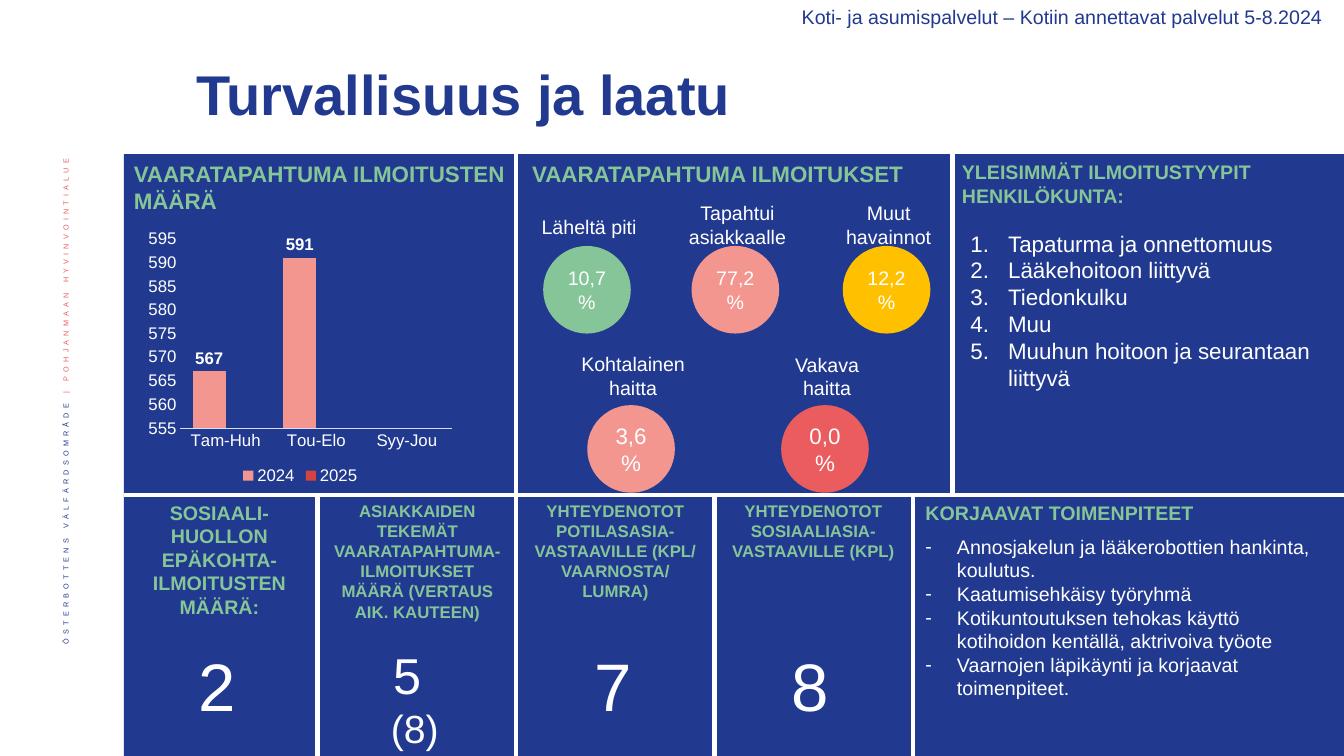
"""Build the safety and quality slide for home services."""
from dataclasses import dataclass

import pptx
import pptx.chart.data
import pptx.dml.color
import pptx.enum.chart
import pptx.enum.shapes
import pptx.enum.text
import pptx.util
from lxml import etree
from pptx.oxml.ns import qn

Pt = pptx.util.Pt
ALIGN = pptx.enum.text.PP_ALIGN
ANCHOR = pptx.enum.text.MSO_ANCHOR
SHAPE = pptx.enum.shapes.MSO_SHAPE


@dataclass(frozen=True)
class Theme:
    font: str = "Arial"
    navy: str = "213A8F"
    white: str = "FFFFFF"
    green: str = "85C598"
    pink: str = "F39690"
    coral: str = "EB5C5F"
    yellow: str = "FFC000"
    red: str = "D3433F"
    axis: str = "D6DDF6"
    title: int = 40
    figure: int = 48
    large: int = 16
    body: int = 14
    small: int = 12
    side: int = 9


THEME = Theme()

TITLE = "Turvallisuus ja laatu"
PERIOD = "Koti- ja asumispalvelut – Kotiin annettavat palvelut 5-8.2024"
SIDE_TEXT = [
    ("ÖSTERBOTTENS VÄLFÄRDSOMRÅDE ", THEME.navy),
    ("| POHJANMAAN HYVINVOINTIALUE ", THEME.coral),
]
PANEL_HEADINGS = [
    ("VAARATAPAHTUMA ILMOITUSTEN MÄÄRÄ", (88.5, 111, 279.5, 46), THEME.large),
    ("VAARATAPAHTUMA ILMOITUKSET", (373, 111, 306, 27), THEME.large),
    ("YLEISIMMÄT ILMOITUSTYYPIT HENKILÖKUNTA:", (680, 111, 280, 41), THEME.body),
    ("KORJAAVAT TOIMENPITEET", (654, 354, 302, 24), THEME.body),
]
CHART_FRAME = (101.5, 160.5, 226, 188.5)
CATEGORIES = ["Tam-Huh", "Tou-Elo", "Syy-Jou"]
SERIES = [
    ("2024", (567, 591, None), THEME.pink),
    ("2025", (None, None, None), THEME.red),
]
SHARES = [
    ("Läheltä piti", "10,7%", (388, 175.7), 150, THEME.green, THEME.body),
    ("Tapahtui asiakkaalle", "77,2 %", (494, 175.7), 140, THEME.pink, THEME.body),
    ("Muut havainnot", "12,2%", (602, 175.7), 140, THEME.yellow, THEME.body),
    ("Kohtalainen haitta", "3,6%", (419.5, 289.4), 248, THEME.pink, THEME.large),
    ("Vakava haitta", "0,0%", (558, 289.4), 248.5, THEME.coral, THEME.large),
]
REPORT_TYPES = [
    "Tapaturma ja onnettomuus",
    "Lääkehoitoon liittyvä",
    "Tiedonkulku",
    "Muu",
    "Muuhun hoitoon ja seurantaan liittyvä",
]
MEASURES = [
    "Annosjakelun ja lääkerobottien hankinta, koulutus.",
    "Kaatumisehkäisy työryhmä",
    "Kotikuntoutuksen tehokas käyttö kotihoidon kentällä, aktrivoiva työote",
    "Vaarnojen läpikäynti ja korjaavat toimenpiteet.",
]
COUNTS = [
    ("SOSIAALI-HUOLLON EPÄKOHTA-ILMOITUSTEN MÄÄRÄ:", THEME.body,
     [("2", THEME.figure)]),
    ("ASIAKKAIDEN TEKEMÄT VAARATAPAHTUMA-ILMOITUKSET MÄÄRÄ (VERTAUS AIK. KAUTEEN)",
     THEME.small, [("5 ", 36), ("(8)", 28)]),
    ("YHTEYDENOTOT POTILASASIA-VASTAAVILLE (KPL/ VAARNOSTA/ LUMRA)", THEME.small,
     [("7", THEME.figure)]),
    ("YHTEYDENOTOT SOSIAALIASIA-VASTAAVILLE (KPL)", THEME.small,
     [("8", THEME.figure)]),
]
LEFT, TOP, MIDDLE, RIGHT, BOTTOM = 88.5, 110, 353.5, 960, 540
COLUMN = 141.8
DIAMETER, LABEL_WIDTH = 62.6, 92


def rgb(value):
    return pptx.dml.color.RGBColor.from_string(value)


def style(font, size, colour, bold=False):
    font.name, font.size, font.bold = THEME.font, Pt(size), bold
    font.color.rgb = rgb(colour)


def add_run(para, text, size, colour, bold=False):
    span = para.add_run()
    span.text = text
    style(span.font, size, colour, bold)
    return span


def add_marker(para, indent, tag, **attributes):
    properties = para._p.get_or_add_pPr()
    properties.set("marL", str(Pt(indent)))
    properties.set("indent", str(-Pt(indent)))
    etree.SubElement(properties, qn("a:buFont"), typeface=THEME.font)
    etree.SubElement(properties, qn(tag), **attributes)


def write(box, lines, colour=THEME.white, bold=False, align=ALIGN.LEFT, marker=None):
    frame = box.text_frame
    frame.word_wrap = True
    for index, (text, size) in enumerate(lines):
        para = frame.add_paragraph() if index else frame.paragraphs[0]
        para.alignment = align
        if marker:
            indent, tag, attributes = marker
            add_marker(para, indent, tag, **attributes)
        add_run(para, text, size, colour, bold)


def add_text(page, frame, lines, **options):
    box = page.shapes.add_textbox(*map(Pt, frame))
    write(box, lines, **options)


def add_solid(page, kind, frame, colour):
    shape = page.shapes.add_shape(kind, *map(Pt, frame))
    shape.shadow.inherit = False
    shape.fill.solid()
    shape.fill.fore_color.rgb = rgb(colour)
    shape.line.fill.background()
    return shape


def add_divider(page, *ends):
    line = page.shapes.add_connector(
        pptx.enum.shapes.MSO_CONNECTOR.STRAIGHT, *map(Pt, ends))
    line.line.color.rgb = rgb(THEME.white)
    line.line.width = Pt(3)
    etree.SubElement(line._element.spPr, qn("a:effectLst"))


def add_side_text(page):
    box = page.shapes.add_textbox(Pt(30), Pt(102), Pt(37.5), Pt(412.5))
    frame = box.text_frame
    frame.word_wrap = True
    frame.vertical_anchor = ANCHOR.MIDDLE
    frame._txBody.bodyPr.set("vert", "vert270")
    para = frame.paragraphs[0]
    para.alignment, para.line_spacing = ALIGN.RIGHT, 0.9
    for text, colour in SIDE_TEXT:
        properties = add_run(para, text, THEME.side, colour)._r.get_or_add_rPr()
        properties.set("baseline", "30000")
        properties.set("spc", "300")


def add_report_chart(page):
    enums = pptx.enum.chart
    data = pptx.chart.data.CategoryChartData()
    data.categories = CATEGORIES
    for name, values, _ in SERIES:
        data.add_series(name, values)
    chart = page.shapes.add_chart(
        enums.XL_CHART_TYPE.COLUMN_CLUSTERED, *map(Pt, CHART_FRAME), data).chart
    style(chart.font, THEME.small, THEME.white)
    chart.has_title = False
    chart.has_legend = True
    chart.legend.position = enums.XL_LEGEND_POSITION.BOTTOM
    chart.legend.include_in_layout = False
    style(chart.legend.font, THEME.small, THEME.white)
    for axis in (chart.category_axis, chart.value_axis):
        axis.has_major_gridlines = False
        axis.major_tick_mark = axis.minor_tick_mark = enums.XL_TICK_MARK.NONE
        style(axis.tick_labels.font, THEME.small, THEME.white)
    chart.category_axis.format.line.color.rgb = rgb(THEME.axis)
    chart.category_axis.format.line.width = Pt(0.75)
    values = chart.value_axis
    values.format.line.fill.background()
    values.minimum_scale, values.maximum_scale, values.major_unit = 555, 595, 5
    plot = chart.plots[0]
    plot.gap_width, plot.overlap, plot.vary_by_categories = 75, 0, False
    for series, (_, _, colour) in zip(plot.series, SERIES):
        series.format.fill.solid()
        series.format.fill.fore_color.rgb = rgb(colour)
        labels = series.data_labels
        labels.show_value = True
        labels.position = enums.XL_LABEL_POSITION.OUTSIDE_END
        style(labels.font, THEME.small, THEME.white, True)


def add_share(page, label, value, corner, label_top, colour, size):
    left, top = corner
    label_left = left + (DIAMETER - LABEL_WIDTH) / 2 + 1.5
    add_text(page, (label_left, label_top, LABEL_WIDTH, 41), [(label, THEME.body)],
             align=ALIGN.CENTER)
    circle = add_solid(page, SHAPE.OVAL, (left, top, DIAMETER, DIAMETER), colour)
    circle.text_frame.vertical_anchor = ANCHOR.MIDDLE
    write(circle, [(value, size)], align=ALIGN.CENTER)


def main():
    deck = pptx.Presentation()
    deck.slide_width, deck.slide_height = Pt(RIGHT), Pt(BOTTOM)
    page = deck.slides.add_slide(deck.slide_layouts[5])
    title = page.shapes.title
    title.left, title.top, title.width, title.height = map(Pt, (133, 34, 718.5, 71))
    title.text_frame.vertical_anchor = ANCHOR.MIDDLE
    write(title, [(TITLE, THEME.title)], colour=THEME.navy, bold=True)
    title.text_frame.paragraphs[0].line_spacing = 0.9

    add_side_text(page)
    add_solid(page, SHAPE.RECTANGLE, (LEFT, TOP, RIGHT - LEFT, BOTTOM - TOP), THEME.navy)
    add_divider(page, LEFT, MIDDLE, RIGHT, MIDDLE)
    for x in (368.6, 680.4):
        add_divider(page, x, TOP, x, MIDDLE)
    for index in range(len(COUNTS)):
        x = 226.8 + index * COLUMN
        add_divider(page, x, MIDDLE, x, BOTTOM)

    add_text(page, (530, 0, 422, 24), [(PERIOD, THEME.body)],
             colour=THEME.navy, align=ALIGN.RIGHT)
    for text, frame, size in PANEL_HEADINGS:
        add_text(page, frame, [(text, size)], colour=THEME.green, bold=True)
    add_report_chart(page)
    for share in SHARES:
        add_share(page, *share)
    add_text(page, (686, 160.5, 269.5, 143), [(text, THEME.large) for text in REPORT_TYPES],
             marker=(27, "a:buAutoNum", {"type": "arabicPeriod"}))
    add_text(page, (654, 378.5, 302, 160), [(text, THEME.body) for text in MEASURES],
             marker=(22.5, "a:buChar", {"char": "-"}))
    for index, (heading, size, figures) in enumerate(COUNTS):
        left = 88 + index * 141.4
        add_text(page, (left, 354, 137.5, 92), [(heading, size)],
                 colour=THEME.green, bold=True, align=ALIGN.CENTER)
        add_text(page, (left - 4, 456.5, COLUMN, 66), figures, align=ALIGN.CENTER)
    deck.save("out.pptx")


if __name__ == "__main__":
    main()
